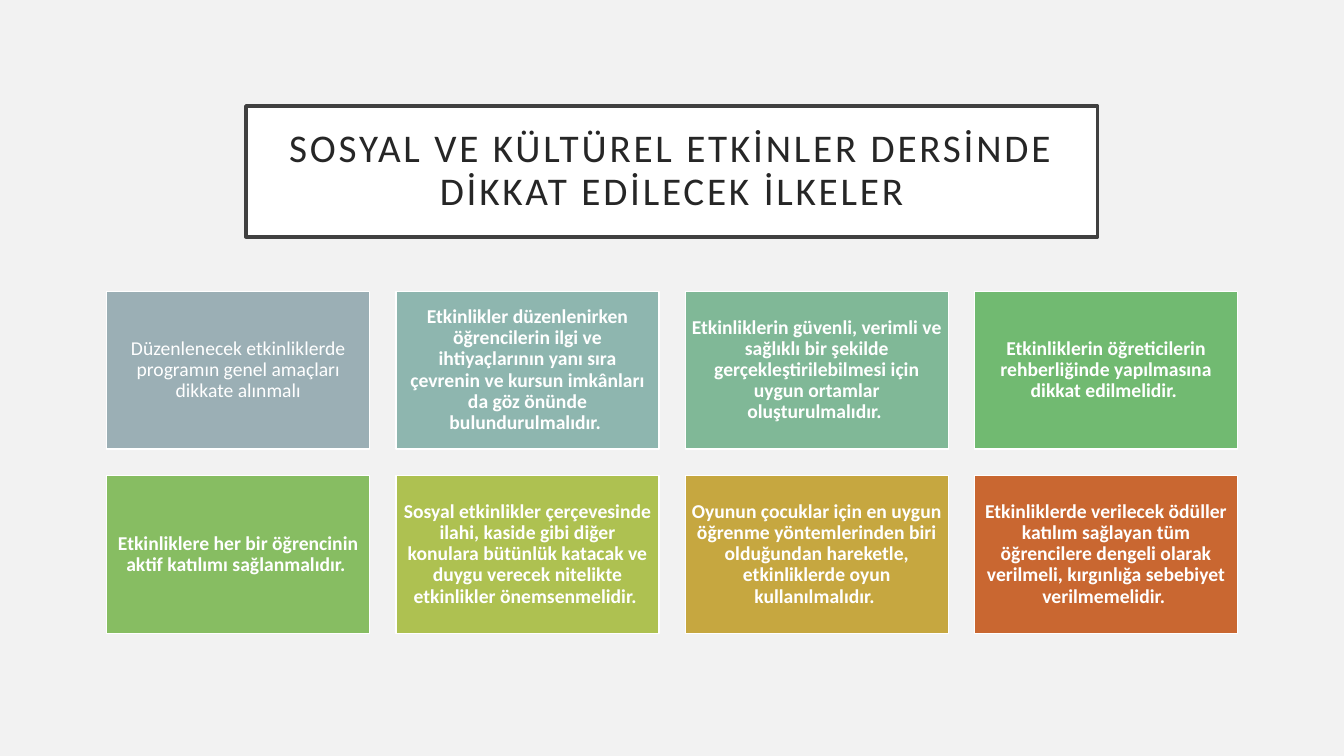
import pptx
import pptx.dml.color
import pptx.enum.shapes
import pptx.enum.text
import pptx.util

Cm = pptx.util.Cm
Pt = pptx.util.Pt


def color(value):
    return pptx.dml.color.RGBColor.from_string(value)


class Deck:
    font = "Calibri"
    background = "F2F2F2"
    white = "FFFFFF"

    def __init__(self):
        self.prs = pptx.Presentation()
        self.prs.slide_width = Cm(33.87)
        self.prs.slide_height = Cm(19.05)
        self.s = self.prs.slides.add_slide(self.prs.slide_layouts[6])
        fill = self.s.background.fill
        fill.solid()
        fill.fore_color.rgb = color(self.background)

    def box(self, x, y, w, h, fill, line, line_width):
        sp = self.s.shapes.add_shape(
            pptx.enum.shapes.MSO_SHAPE.RECTANGLE, Cm(x), Cm(y), Cm(w), Cm(h))
        sp.shadow.inherit = False
        sp.fill.solid()
        sp.fill.fore_color.rgb = color(fill)
        sp.line.color.rgb = color(line)
        sp.line.width = Pt(line_width)
        return sp

    def label(self, sp, text, size, ink, inset, bold=False):
        tf = sp.text_frame
        tf.text = text
        tf.word_wrap = True
        tf.vertical_anchor = pptx.enum.text.MSO_ANCHOR.MIDDLE
        tf.margin_left = tf.margin_right = Cm(inset)
        tf.margin_top = tf.margin_bottom = Cm(inset)
        p = tf.paragraphs[0]
        p.alignment = pptx.enum.text.PP_ALIGN.CENTER
        p.line_spacing = 0.9
        r = p.runs[0]
        r.font.name = self.font
        r.font.size = Pt(size)
        r.font.bold = bold
        r.font.color.rgb = color(ink)
        return r

    def title(self, text):
        sp = self.box(6.2, 2.67, 21.46, 3.3, self.white, "404040", 2.5)
        r = self.label(sp, text, 28, "262626", 0.5)
        r._r.get_or_add_rPr().set("spc", "200")

    def tile(self, x, y, w, h, fill, text, bold):
        sp = self.box(x, y, w, h, fill, self.white, 1)
        self.label(sp, text, 14, self.white, 0.15, bold)


PRINCIPLES = [
    ("9BAFB5", "Düzenlenecek etkinliklerde programın genel amaçları dikkate alınmalı"),
    ("8EB6AF", "Etkinlikler düzenlenirken öğrencilerin ilgi ve ihtiyaçlarının yanı sıra "
               "çevrenin ve kursun imkânları da göz önünde bulundurulmalıdır. "),
    ("80B897", "Etkinliklerin güvenli, verimli ve sağlıklı bir şekilde "
               "gerçekleştirilebilmesi için uygun ortamlar oluşturulmalıdır. "),
    ("71BA71", "Etkinliklerin öğreticilerin rehberliğinde yapılmasına dikkat edilmelidir. "),
    ("87BD62", "Etkinliklere her bir öğrencinin aktif katılımı sağlanmalıdır. "),
    ("AEC151", "Sosyal etkinlikler çerçevesinde ilahi, kaside gibi diğer konulara bütünlük "
               "katacak ve duygu verecek nitelikte etkinlikler önemsenmelidir. "),
    ("C6A740", "Oyunun çocuklar için en uygun öğrenme yöntemlerinden biri olduğundan "
               "hareketle, etkinliklerde oyun kullanılmalıdır. "),
    ("C96731", "Etkinliklerde verilecek ödüller katılım sağlayan tüm öğrencilere dengeli "
               "olarak verilmeli, kırgınlığa sebebiyet verilmemelidir. "),
]
COLUMNS = 4
LEFT, TOP = 2.69, 7.34
WIDTH, HEIGHT, GAP = 6.63, 3.98, 0.66


def main():
    deck = Deck()
    deck.title("SOSYAL VE KÜLTÜREL ETKİNLER DERSİNDE DİKKAT EDİLECEK İLKELER")
    for i, (fill, text) in enumerate(PRINCIPLES):
        row, column = divmod(i, COLUMNS)
        x = LEFT + column * (WIDTH + GAP)
        y = TOP + row * (HEIGHT + GAP)
        deck.tile(x, y, WIDTH, HEIGHT, fill, text, bold=i > 0)
    deck.prs.save("out.pptx")


if __name__ == "__main__":
    main()
